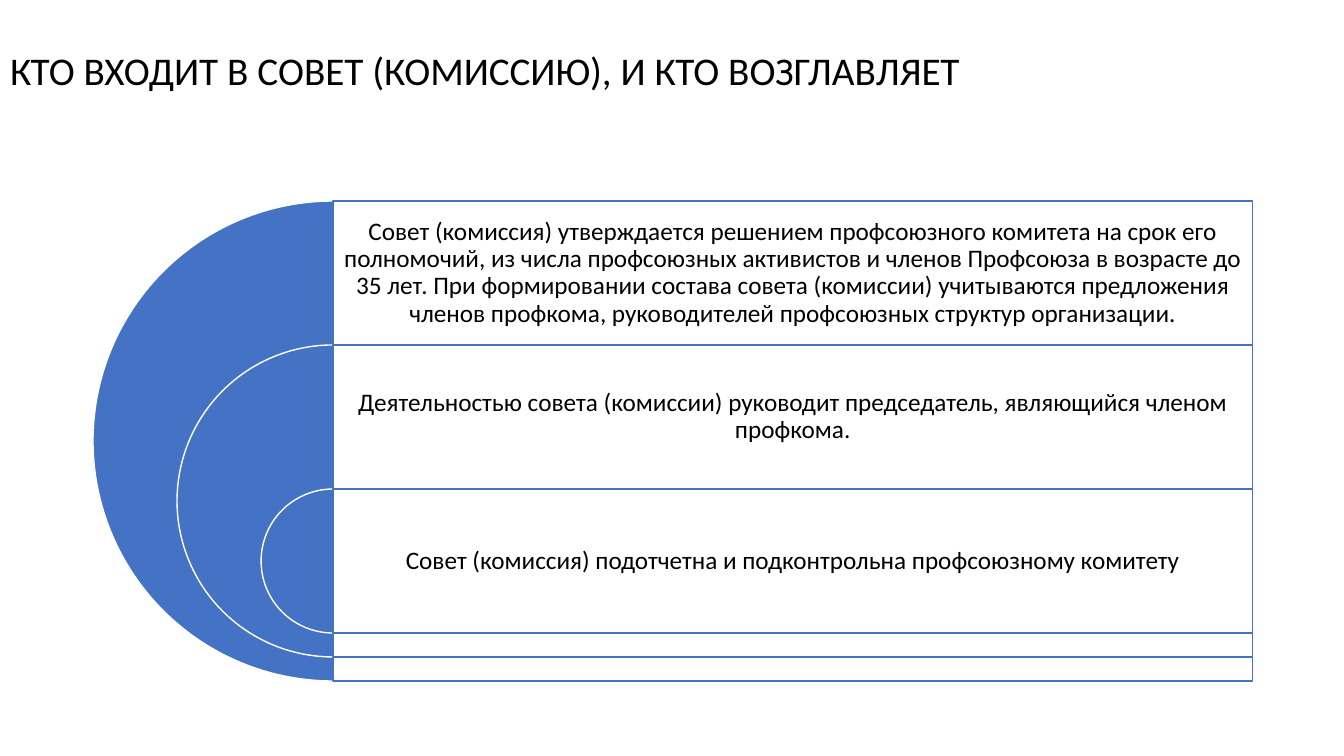
from dataclasses import dataclass

from lxml import etree
from pptx import Presentation
from pptx import util as u
from pptx.dml.color import RGBColor
from pptx.enum import shapes, text
from pptx.oxml.ns import qn


@dataclass(frozen=True)
class Theme:
    font: str = "Calibri"
    ink: str = "000000"
    accent: str = "4472C4"
    paper: str = "FFFFFF"
    title_size: int = 28
    body_size: int = 18
    outline: int = 1


class SlideBuilder:
    """Draws styled elements on one slide, with lengths in px."""

    SCALE = 914400 / 100.8

    def __init__(self, slide, theme):
        self.slide = slide
        self.theme = theme

    def emu(self, *lengths):
        return [u.Emu(round(length * self.SCALE)) for length in lengths]

    def shape(self, kind, box, fill, line, opacity=100):
        figure = self.slide.shapes.add_shape(kind, *self.emu(*box))
        figure.shadow.inherit = False
        figure.fill.solid()
        figure.fill.fore_color.rgb = RGBColor.from_string(fill)
        figure.line.color.rgb = RGBColor.from_string(line)
        figure.line.width = u.Pt(self.theme.outline)
        if opacity < 100:
            color = figure.fill._xPr.find(".//" + qn("a:srgbClr"))
            etree.SubElement(color, qn("a:alpha"), val=str(opacity * 1000))
        return figure

    def half_disc(self, box):
        disc = self.shape(shapes.MSO_SHAPE.PIE, box, self.theme.accent, self.theme.paper)
        disc.adjustments[0] = 54
        disc.adjustments[1] = 162

    def panel(self, box):
        self.shape(shapes.MSO_SHAPE.RECTANGLE, box, self.theme.paper, self.theme.accent, 90)

    def label(self, words, box, size, align, anchor, insets):
        frame = self.slide.shapes.add_textbox(*self.emu(*box)).text_frame
        frame.word_wrap = True
        frame.vertical_anchor = anchor
        (frame.margin_left, frame.margin_top,
         frame.margin_right, frame.margin_bottom) = self.emu(*insets)
        paragraph = frame.paragraphs[0]
        paragraph.text = words
        paragraph.alignment = align
        paragraph.line_spacing = 0.9
        paragraph.font.name = self.theme.font
        paragraph.font.size = u.Pt(size)
        paragraph.font.color.rgb = RGBColor.from_string(self.theme.ink)


TITLE = "КТО ВХОДИТ В СОВЕТ (КОМИССИЮ), И КТО ВОЗГЛАВЛЯЕТ"
RULES = [
    "Совет (комиссия) утверждается решением профсоюзного комитета на срок его "
    "полномочий, из числа профсоюзных активистов и членов Профсоюза в возрасте до "
    "35 лет. При формировании состава совета (комиссии) учитываются предложения "
    "членов профкома, руководителей профсоюзных структур организации.",
    "Деятельностью совета (комиссии) руководит председатель, являющийся членом профкома.",
    "Совет (комиссия) подотчетна и подконтрольна профсоюзному комитету",
]
AXIS, TOP, PANEL_WIDTH = 333, 201, 919
ROW, OUTER_DIAMETER, DIAMETER_STEP = 144, 480, 168


def main():
    deck = Presentation()
    deck.slide_width, deck.slide_height = u.Inches(13.33), u.Inches(7.5)
    theme = Theme()
    council = SlideBuilder(deck.slides.add_slide(deck.slide_layouts[6]), theme)

    council.label(TITLE, (0, 24, 1081, 146), theme.title_size,
                  text.PP_ALIGN.LEFT, text.MSO_ANCHOR.TOP, (10, 28, 10, 5))
    for level, rule in enumerate(RULES):
        diameter = OUTER_DIAMETER - level * DIAMETER_STEP
        top = TOP + level * ROW
        council.half_disc((AXIS - diameter // 2, top, diameter, diameter))
        council.panel((AXIS, top, PANEL_WIDTH, diameter))
        council.label(rule, (AXIS, top, PANEL_WIDTH, ROW), theme.body_size,
                      text.PP_ALIGN.CENTER, text.MSO_ANCHOR.MIDDLE, (7, 7, 7, 7))

    deck.save("out.pptx")


if __name__ == "__main__":
    main()
